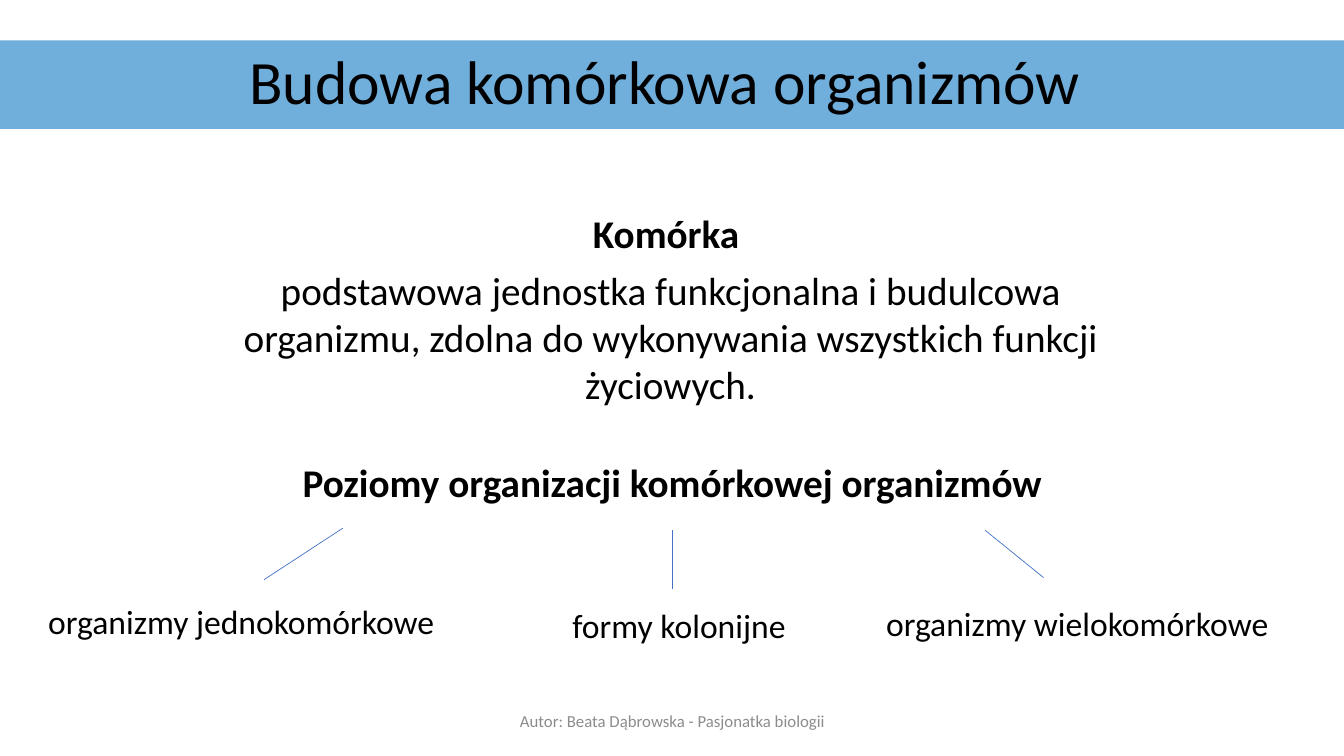
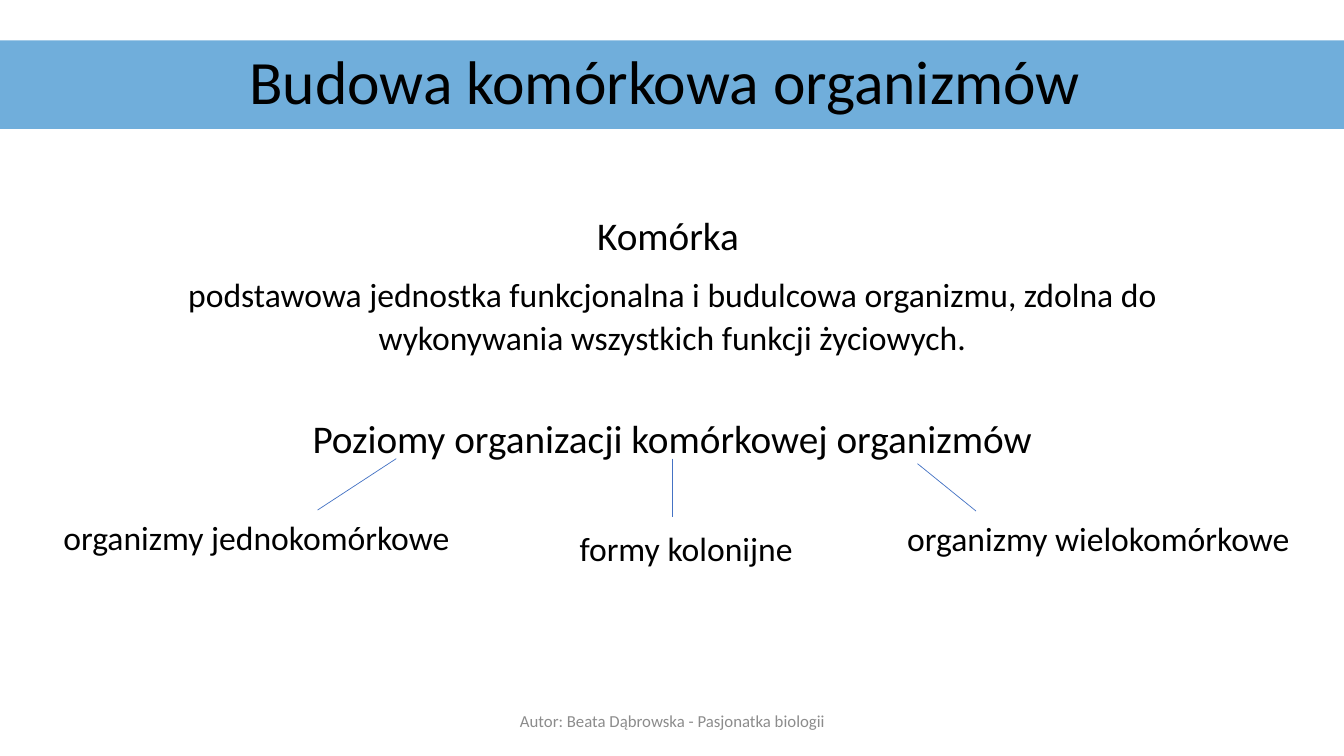
from dataclasses import dataclass

from lxml.etree import SubElement
from pptx import Presentation
from pptx.dml.color import RGBColor as Color
from pptx.enum.shapes import MSO_CONNECTOR as Connector
from pptx.enum.text import MSO_ANCHOR as Anchor, PP_ALIGN as Align
from pptx.oxml.ns import qn
from pptx.util import Inches, Pt


@dataclass(frozen=True)
class Theme:
    font: str = "Calibri"
    text: Color = Color(0x00, 0x00, 0x00)
    muted: Color = Color(0x8C, 0x8C, 0x8C)
    band: Color = Color(0x00, 0x70, 0xC0)
    band_alpha: int = 56
    line: Color = Color(0x44, 0x72, 0xC4)
    line_width: float = 0.5
    title_size: int = 44
    heading_size: int = 28
    label_size: int = 24
    footer_size: int = 12


THEME = Theme()
SLIDE_WIDTH, SLIDE_HEIGHT = 13.33, 7.5
LABEL_WIDTH, LABEL_HEIGHT = 4.26, 0.5

TITLE = "Budowa komórkowa organizmów "
FOOTER = "Autor: Beata Dąbrowska - Pasjonatka biologii"
TERM = "Komórka "
DEFINITION = ("podstawowa jednostka funkcjonalna i budulcowa organizmu, "
              "zdolna do wykonywania wszystkich funkcji życiowych.")
LEVELS_HEADING = "Poziomy organizacji komórkowej organizmów"
LEVELS = ("organizmy jednokomórkowe", "formy kolonijne", "organizmy wielokomórkowe")
# Width and drop of the line that leads to each level
BRANCHES = ((-0.78, 0.51), (0, 0.58), (0.58, 0.47))


def write(frame, text, *, size, bold=False, color=THEME.text, align=Align.LEFT,
          spacing=1.0, before=0, append=False):
    """Write one formatted paragraph into a text frame."""
    paragraph = frame.add_paragraph() if append else frame.paragraphs[0]
    paragraph.alignment = align
    paragraph.line_spacing = spacing
    paragraph.space_before = Pt(before)
    run = paragraph.add_run()
    run.text = text
    font = run.font
    font.name, font.size, font.bold = THEME.font, Pt(size), bold
    font.color.rgb = color


def add_frame(slide, left, top, width, height, anchor=Anchor.TOP):
    box = slide.shapes.add_textbox(Inches(left), Inches(top), Inches(width), Inches(height))
    frame = box.text_frame
    frame.word_wrap = True
    frame.vertical_anchor = anchor
    return frame


def add_line(slide, left, top, width, drop):
    line = slide.shapes.add_connector(
        Connector.STRAIGHT, Inches(left), Inches(top),
        Inches(left + width), Inches(top + drop))
    line.line.color.rgb = THEME.line
    line.line.width = Pt(THEME.line_width)
    SubElement(line._element.spPr, qn("a:effectLst"))


def format_title(slide, left, top, width, height):
    """Turn the title placeholder into the translucent band."""
    title = slide.shapes.title
    title.left, title.top = Inches(left), Inches(top)
    title.width, title.height = Inches(width), Inches(height)
    title.fill.solid()
    title.fill.fore_color.rgb = THEME.band
    color = title._element.spPr.find(qn("a:solidFill")).find(qn("a:srgbClr"))
    SubElement(color, qn("a:alpha"), val=str(THEME.band_alpha * 1000))
    title.text_frame.vertical_anchor = Anchor.MIDDLE
    write(title.text_frame, TITLE, size=THEME.title_size, align=Align.CENTER, spacing=0.9)


def add_footer(slide, left, top, width, height):
    frame = add_frame(slide, left, top, width, height, Anchor.MIDDLE)
    write(frame, FOOTER, size=THEME.footer_size, color=THEME.muted, align=Align.CENTER)


def add_definition(slide, left, top, width, height, *, bold, size, spacing, before):
    """Place the term and its definition."""
    frame = add_frame(slide, left, top, width, height)
    write(frame, TERM, size=THEME.heading_size, bold=bold, align=Align.CENTER)
    write(frame, DEFINITION, size=size, align=Align.CENTER, spacing=spacing,
          before=before, append=True)


def add_levels(slide, left, top, width, *, bold, line_starts, label_starts):
    """Place the heading, then lines and labels relative to its corner."""
    frame = add_frame(slide, left, top, width, 0.57)
    write(frame, LEVELS_HEADING, size=THEME.heading_size, bold=bold, align=Align.CENTER)
    for text, branch, line, label in zip(LEVELS, BRANCHES, line_starts, label_starts):
        add_line(slide, left + line[0], top + line[1], *branch)
        frame = add_frame(slide, left + label[0], top + label[1], LABEL_WIDTH, LABEL_HEIGHT)
        write(frame, text, size=THEME.label_size)


def add_topic_slide(presentation, definition_box, definition_format, levels_box, levels_format):
    slide = presentation.slides.add_slide(presentation.slide_layouts[5])
    format_title(slide, 0, 0.4, SLIDE_WIDTH, 0.88)
    add_definition(slide, *definition_box, **definition_format)
    add_levels(slide, *levels_box, **levels_format)
    add_footer(slide, 4.42, 6.95, 4.5, 0.4)


def main():
    presentation = Presentation()
    presentation.slide_width = Inches(SLIDE_WIDTH)
    presentation.slide_height = Inches(SLIDE_HEIGHT)

    # Bold headings and a narrow definition
    add_topic_slide(
        presentation,
        (2.24, 2.03, 8.82, 2.14),
        dict(bold=True, size=THEME.heading_size, spacing=1.0, before=7),
        (0, 4.5, SLIDE_WIDTH),
        dict(bold=True,
             line_starts=((3.4, 0.74), (6.67, 0.76), (9.77, 0.76)),
             label_starts=((0.38, 1.41), (5.58, 1.45), (8.69, 1.43))))

    # Regular headings and a wide definition
    add_topic_slide(
        presentation,
        (0.92, 2.05, 11.5, 1.7),
        dict(bold=False, size=THEME.label_size, spacing=1.07, before=9),
        (0, 4.06, SLIDE_WIDTH),
        dict(bold=False,
             line_starts=((3.93, 0.49), (6.67, 0.49), (9.1, 0.54)),
             label_starts=((0.53, 1.02), (5.65, 1.13), (8.9, 1.03))))

    presentation.save("out.pptx")


if __name__ == "__main__":
    main()
